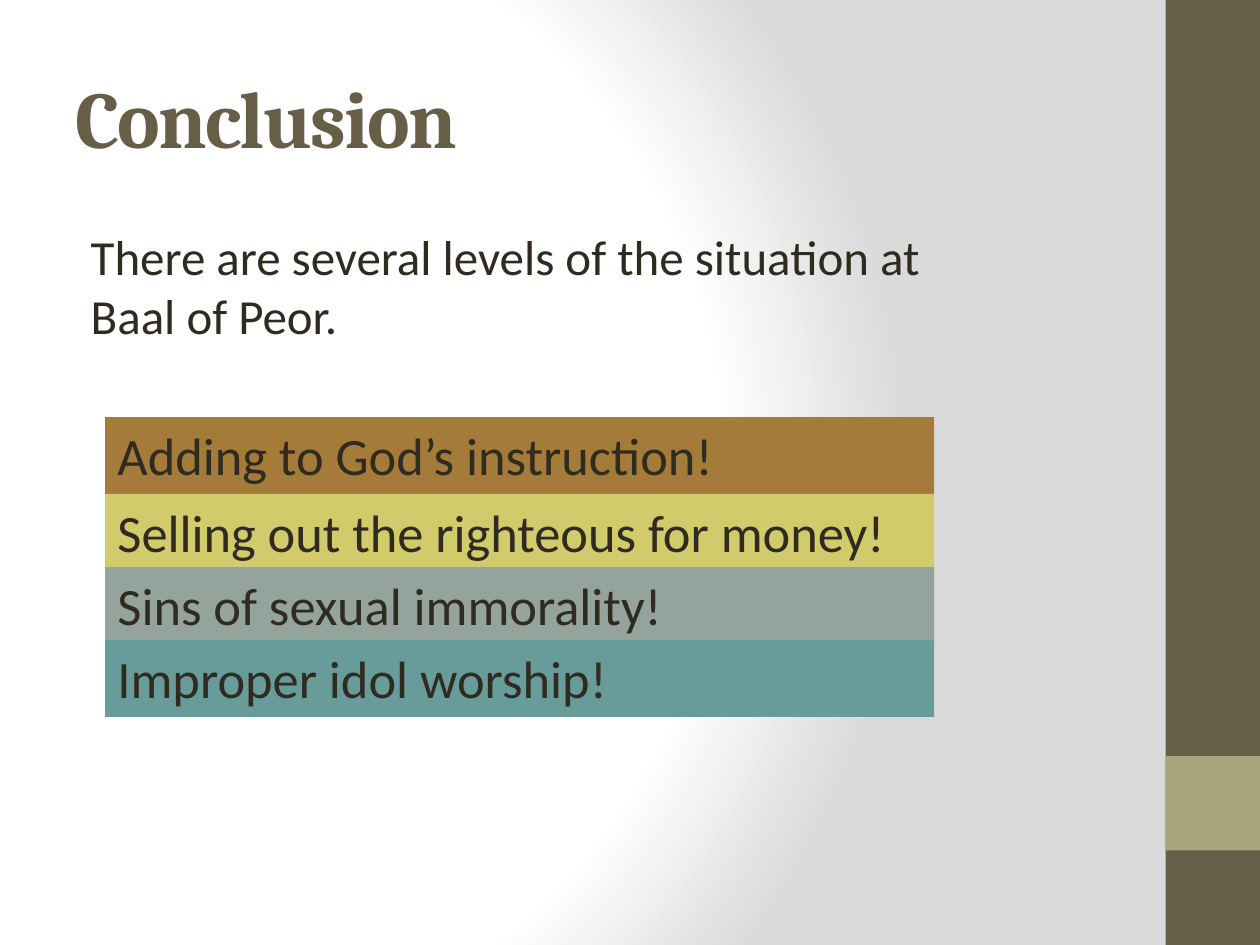
"""Build the Conclusion slide with four stacked statement bars."""
from pptx import Presentation, util as u
from pptx.dml.color import RGBColor
from pptx.enum import shapes, text
from pptx.oxml import parse_xml
from pptx.oxml.ns import nsdecls

BROWN = RGBColor(0x67, 0x5E, 0x47)
OLIVE = RGBColor(0xA9, 0xA5, 0x7C)
INK = RGBColor(0x2F, 0x2B, 0x20)
COPPER = RGBColor(0xA4, 0x7B, 0x38)
YELLOW = RGBColor(0xD2, 0xCB, 0x6C)
SAGE = RGBColor(0x95, 0xA3, 0x9D)
TEAL = RGBColor(0x68, 0x9C, 0x9A)

TITLE = "Conclusion"
INTRO = "There are several levels of the situation at\vBaal of Peor."
STATEMENTS = [
    ("Adding to God’s instruction!", COPPER, 3.31),
    ("Selling out the righteous for money!", YELLOW, 3.92),
    ("Sins of sexual immorality!", SAGE, 4.5),
    ("Improper idol worship!", TEAL, 5.08),
]
STOPS = [(0, "FFFFFF"), (75, "FFFFFF"), (100, "DADADA")]
W, H = 10, 7.5
BAND = 0.075 * W
TEXT_W = 8.33
BAR_LEFT, BAR_W, BAR_H = W / 12, 6.58, 0.61


def set_background(s):
    stops = "".join(f'<a:gs pos="{pos * 1000}"><a:srgbClr val="{c}"/></a:gs>' for pos, c in STOPS)
    s.element.cSld.insert(0, parse_xml(
        f'<p:bg {nsdecls("p", "a")}><p:bgPr><a:gradFill rotWithShape="1"><a:gsLst>{stops}</a:gsLst>'
        '<a:path path="circle"><a:fillToRect l="20000" t="50000" r="100000" b="50000"/></a:path>'
        '</a:gradFill><a:effectLst/></p:bgPr></p:bg>'))


def place(sp, *box):
    sp.left, sp.top, sp.width, sp.height = map(u.Inches, box)


def add_rect(s, color, *box):
    sp = s.shapes.add_shape(shapes.MSO_SHAPE.RECTANGLE, *map(u.Inches, box))
    sp.shadow.inherit = False
    sp.fill.solid()
    sp.fill.fore_color.rgb = color
    sp.line.fill.background()
    return sp


def write(sp, content, size, color, font, anchor, bold=False):
    tf = sp.text_frame
    tf.word_wrap = True
    tf.vertical_anchor = anchor
    p = tf.paragraphs[0]
    p.text = content
    p.alignment = text.PP_ALIGN.LEFT
    p.font.name, p.font.size, p.font.bold = font, u.Pt(size), bold
    p.font.color.rgb = color
    return p


def main():
    prs = Presentation()
    prs.slide_width, prs.slide_height = u.Inches(W), u.Inches(H)
    s = prs.slides.add_slide(prs.slide_layouts[1])
    set_background(s)
    add_rect(s, BROWN, W - BAND, 0, BAND, H)
    add_rect(s, OLIVE, W - BAND, 0.8 * H, BAND, BAND)

    title, body = s.placeholders
    place(title, 0.5, 0.3, TEXT_W, 1.25)
    p = write(title, TITLE, 46, BROWN, "Cambria", text.MSO_ANCHOR.MIDDLE, True)
    p.runs[0].font._element.set("spc", "-100")

    place(body, 0.5, 1.75, TEXT_W, 1.17)
    p = write(body, INTRO, 28, INK, "Calibri", text.MSO_ANCHOR.TOP)
    pPr = p._p.get_or_add_pPr()
    pPr.set("marL", str(u.Inches(0.12)))
    pPr.set("indent", "0")
    pPr.insert_element_before(parse_xml(f'<a:buNone {nsdecls("a")}/>'), "a:tabLst", "a:defRPr", "a:extLst")

    for statement, color, top in STATEMENTS:
        sp = add_rect(s, color, BAR_LEFT, top, BAR_W, BAR_H)
        write(sp, statement, 30, INK, "Calibri", text.MSO_ANCHOR.TOP)
        sp.text_frame.auto_size = text.MSO_AUTO_SIZE.SHAPE_TO_FIT_TEXT

    prs.save("out.pptx")


if __name__ == "__main__":
    main()
